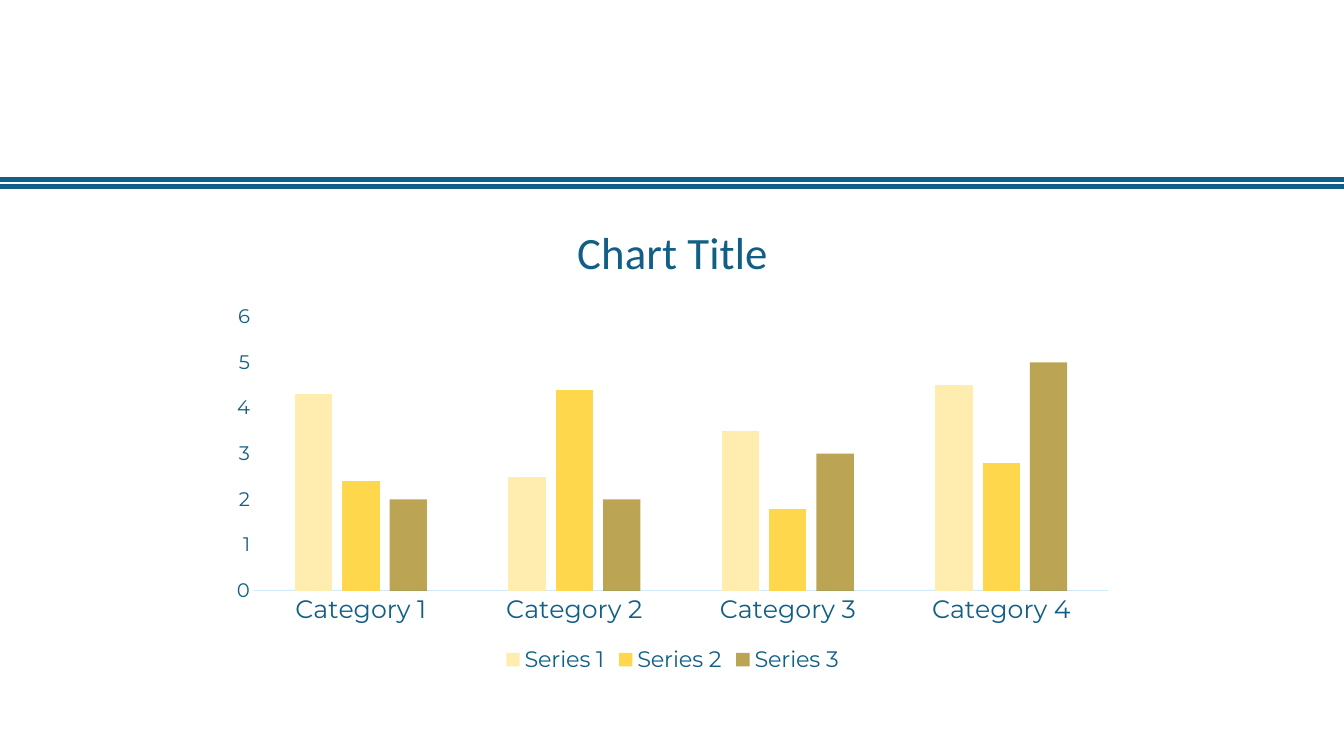
"""Build a slide with a double rule above a clustered column chart."""
from dataclasses import dataclass

from lxml import etree
from pptx import Presentation
from pptx.chart.chart import Chart
from pptx.chart.data import CategoryChartData
from pptx.dml.color import RGBColor
from pptx.enum.chart import XL_CHART_TYPE, XL_LEGEND_POSITION, XL_TICK_MARK
from pptx.oxml.ns import qn
from pptx.slide import Slide
from pptx.text.text import Font
from pptx.util import Inches, Pt

CLUSTERED = XL_CHART_TYPE.COLUMN_CLUSTERED
LEGEND_BOTTOM = XL_LEGEND_POSITION.BOTTOM
NO_TICK = XL_TICK_MARK.NONE

BLUE = RGBColor(0x11, 0x5F, 0x86)
PALE_BLUE = RGBColor(0xCF, 0xEB, 0xF9)
CREAM = RGBColor(0xFF, 0xED, 0xAF)
YELLOW = RGBColor(0xFF, 0xD7, 0x4D)
OLIVE = RGBColor(0x9A, 0x78, 0x00)

TITLE_FONT = "Calibri"
LABEL_FONT = "Montserrat"
PAGE_WIDTH = 13.33
PAGE_HEIGHT = 7.5
RULE_TOPS = (1.85, 1.78)


@dataclass(frozen=True)
class ColumnSeries:
    name: str
    values: tuple[float, ...]
    color: RGBColor
    opacity: int = 100


CATEGORIES = ("Category 1", "Category 2", "Category 3", "Category 4")
SERIES = (
    ColumnSeries("Series 1", (4.3, 2.5, 3.5, 4.5), CREAM),
    ColumnSeries("Series 2", (2.4, 4.4, 1.8, 2.8), YELLOW),
    ColumnSeries("Series 3", (2, 2, 3, 5), OLIVE, 67),
)


def style_font(font: Font, size: float, name: str = LABEL_FONT) -> None:
    font.name = name
    font.size = Pt(size)
    font.bold = False
    font.color.rgb = BLUE


def draw_rule(page: Slide, top: float) -> None:
    rule = page.shapes.add_connector(
        1, Inches(0), Inches(top), Inches(PAGE_WIDTH), Inches(top)
    )
    rule.line.color.rgb = BLUE
    rule.line.width = Pt(3)
    etree.SubElement(rule._element.spPr, qn("a:effectLst"))


def add_column_chart(page: Slide) -> Chart:
    data = CategoryChartData()
    data.categories = CATEGORIES
    for series in SERIES:
        data.add_series(series.name, series.values)
    frame = page.shapes.add_chart(
        CLUSTERED, Inches(2.17), Inches(1.96), Inches(9), Inches(4.76), data
    )
    return frame.chart


def style_columns(chart: Chart) -> None:
    plot = chart.plots[0]
    plot.gap_width = 219
    plot.overlap = -27
    plot.vary_by_categories = False
    for column, series in zip(plot.series, SERIES):
        column.invert_if_negative = False
        column.format.fill.solid()
        column.format.fill.fore_color.rgb = series.color
        if series.opacity < 100:
            color = next(column._element.iter(qn("a:srgbClr")))
            etree.SubElement(color, qn("a:alpha"), val=str(series.opacity * 1000))


def style_axes(chart: Chart) -> None:
    for axis, size in ((chart.category_axis, 18), (chart.value_axis, 14)):
        axis.has_major_gridlines = False
        axis.major_tick_mark = NO_TICK
        axis.minor_tick_mark = NO_TICK
        style_font(axis.tick_labels.font, size)
    chart.category_axis.format.line.color.rgb = PALE_BLUE
    chart.category_axis.format.line.width = Pt(0.75)
    chart.value_axis.format.line.fill.background()


def style_title_and_legend(chart: Chart) -> None:
    chart.has_title = True
    title = chart.chart_title.text_frame
    title.text = "Chart Title"
    style_font(title.paragraphs[0].runs[0].font, 32, TITLE_FONT)
    chart.has_legend = True
    chart.legend.position = LEGEND_BOTTOM
    chart.legend.include_in_layout = False
    style_font(chart.legend.font, 16)


def main() -> None:
    deck = Presentation()
    deck.slide_width = Inches(PAGE_WIDTH)
    deck.slide_height = Inches(PAGE_HEIGHT)
    page = deck.slides.add_slide(deck.slide_layouts[6])
    for top in RULE_TOPS:
        draw_rule(page, top)
    chart = add_column_chart(page)
    style_font(chart.font, 10, TITLE_FONT)
    style_columns(chart)
    style_axes(chart)
    style_title_and_legend(chart)
    deck.save("out.pptx")


if __name__ == "__main__":
    main()
